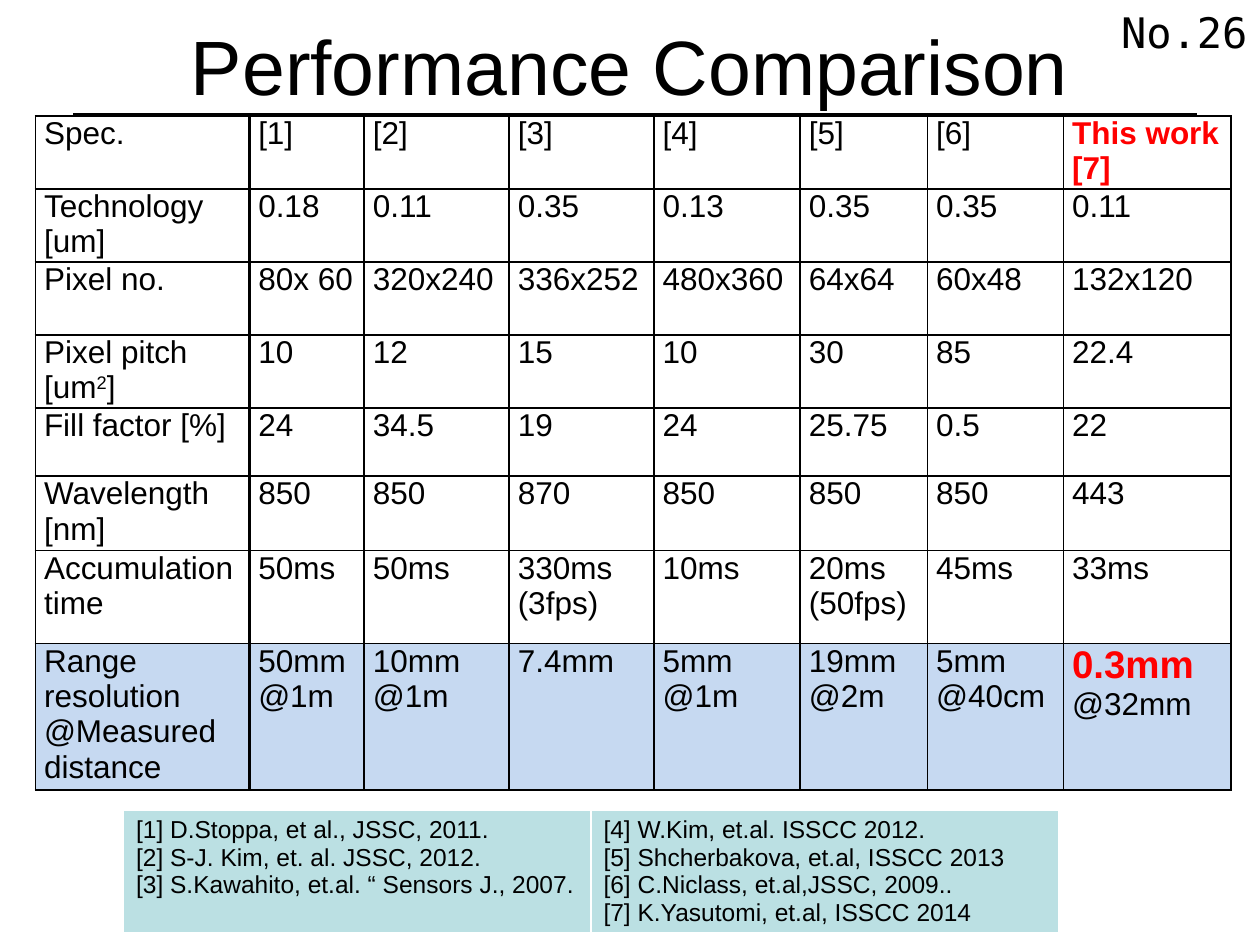
from dataclasses import dataclass
from typing import Optional

from lxml import etree
from pptx import Presentation
from pptx import util as u
from pptx.dml.color import RGBColor
from pptx.enum import shapes, text
from pptx.oxml.ns import qn

BLACK = RGBColor(0, 0, 0)
WHITE = RGBColor(255, 255, 255)
RED = RGBColor(255, 0, 0)
PALE_BLUE = RGBColor(0xC6, 0xD9, 0xF1)
TEAL = RGBColor(0xBB, 0xE0, 0xE3)
SANS, MONO = "Arial", "DejaVu Sans Mono"
SIDES = "LRTB"


@dataclass(frozen=True)
class Grid:
    """Table layout in inches, with its look."""
    left: float
    top: float
    cols: tuple[float, ...]
    rows: tuple[float, ...]
    size: int
    border: RGBColor
    align: text.PP_ALIGN
    inset: tuple[float, float]
    thick_edge: Optional[int] = None  # column whose right edge is heavier


@dataclass(frozen=True)
class Emphasis:
    """First line of a cell set in bold red."""
    row: int
    col: int
    lines: int
    size: int


SPEC_GRID = Grid(0.28, 0.92, (1.7, 0.91, 1.15, 1.15, 1.16, 1.01, 1.08, 1.33),
                 (0.58, 0.58, 0.58, 0.58, 0.54, 0.59, 0.74, 1.16),
                 18, BLACK, text.PP_ALIGN.JUSTIFY, (0.07, 0), 0)
REF_GRID = Grid(0.98, 6.43, (3.71, 3.71), (0.79,),
                14, WHITE, text.PP_ALIGN.LEFT, (0.1, 0.05))

# "\n" starts a paragraph, "\v" breaks a line
SPECS = (
    ("Spec.", "[1]", "[2]", "[3]", "[4]", "[5]", "[6]", "This work\n[7]"),
    ("Technology [um]", "0.18", "0.11", "0.35", "0.13", "0.35", "0.35", "0.11"),
    ("Pixel no.", "80x 60", "320x240", "336x252", "480x360", "64x64", "60x48",
     "132x120"),
    ("Pixel pitch\n[um", "10", "12", "15", "10", "30", "85", "22.4"),
    ("Fill factor [%]", "24", "34.5", "19", "24", "25.75", "0.5", "22"),
    ("Wavelength\n[nm]", "850", "850", "870", "850", "850", "850", "443"),
    ("Accumulation time", "50ms", "50ms", "330ms\n(3fps)", "10ms",
     "20ms\n(50fps)", "45ms", "33ms"),
    ("Range resolution\v@Measured distance", "50mm\n@1m", "10mm\n@1m", "7.4mm",
     "5mm\n@1m", "19mm\n@2m", "5mm\n@40cm", "0.3mm\n@32mm"),
)
PITCH_ROW, RANGE_ROW = 3, 7
EMPHASES = (Emphasis(0, 7, 2, 18), Emphasis(RANGE_ROW, 7, 1, 22))
REFERENCES = ((
    "[1] D.Stoppa, et al., JSSC, 2011.\n"
    "[2] S-J. Kim, et. al. JSSC, 2012.\n"
    "[3] S.Kawahito, et.al. “ Sensors J., 2007.",
    "[4] W.Kim, et.al. ISSCC 2012.\n"
    "[5] Shcherbakova, et.al, ISSCC 2013\n"
    "[6] C.Niclass, et.al,JSSC, 2009..\n"
    "[7] K.Yasutomi, et.al, ISSCC 2014",
),)


def style_run(r, size: float, color: RGBColor = BLACK, bold: bool = False,
              name: str = SANS) -> None:
    r.font.size, r.font.name, r.font.bold = u.Pt(size), name, bold
    r.font.color.rgb = color


def style_text(tf, size: float, align: text.PP_ALIGN, name: str = SANS) -> None:
    for p in tf.paragraphs:
        p.alignment = align
        for r in p.runs:
            style_run(r, size, name=name)


def set_border(cell, side: str, color: RGBColor, width: float) -> None:
    ln = etree.SubElement(cell._tc.get_or_add_tcPr(), qn(f"a:ln{side}"),
                          w=str(u.Pt(width)))
    fill = etree.SubElement(ln, qn("a:solidFill"))
    etree.SubElement(fill, qn("a:srgbClr"), val=str(color))


def add_grid(slide, grid: Grid, content, fills: dict[int, RGBColor]):
    """Add a table; fills maps a row number to its colour."""
    table = slide.shapes.add_table(
        len(grid.rows), len(grid.cols), u.Inches(grid.left), u.Inches(grid.top),
        u.Inches(sum(grid.cols)), u.Inches(sum(grid.rows))).table
    table.first_row = table.horz_banding = False
    for column, width in zip(table.columns, grid.cols):
        column.width = u.Inches(width)
    for row, height in zip(table.rows, grid.rows):
        row.height = u.Inches(height)
    for i, values in enumerate(content):
        for j, value in enumerate(values):
            cell = table.cell(i, j)
            cell.margin_left = cell.margin_right = u.Inches(grid.inset[0])
            cell.margin_top = cell.margin_bottom = u.Inches(grid.inset[1])
            heavy = {grid.thick_edge: "R"}
            if grid.thick_edge is not None:
                heavy[grid.thick_edge + 1] = "L"
            for side in SIDES:
                width = 1.5 if heavy.get(j) == side else 1
                set_border(cell, side, grid.border, width)
            if i in fills:
                cell.fill.solid()
                cell.fill.fore_color.rgb = fills[i]
            else:
                cell.fill.background()
            cell.text_frame.text = value
            style_text(cell.text_frame, grid.size, grid.align)
    return table


def add_square_unit(p, size: float) -> None:
    """Close a unit with a raised 2 and a bracket."""
    for part, baseline in (("2", "30000"), ("]", "0")):
        r = p.add_run()
        r.text = part
        style_run(r, size)
        r._r.get_or_add_rPr().set("baseline", baseline)


def add_title(prs, slide) -> None:
    line = slide.shapes.add_connector(
        shapes.MSO_CONNECTOR.STRAIGHT, u.Inches(0.58), u.Inches(0.91),
        u.Inches(9.5), u.Inches(0.91))
    line.line.color.rgb, line.line.width = BLACK, u.Pt(2)
    etree.SubElement(line._element.spPr, qn("a:effectLst"))
    sp = slide.shapes.title
    sp.left, sp.top = int(prs.slide_width * 0.05), u.Inches(-0.11)
    sp.width, sp.height = int(prs.slide_width * 0.9), u.Inches(1.25)
    tf = sp.text_frame
    tf.text = "Performance Comparison"
    tf.vertical_anchor = text.MSO_ANCHOR.MIDDLE
    style_text(tf, 44, text.PP_ALIGN.CENTER)


def add_slide_number(prs, slide) -> None:
    width = u.Inches(2.33)
    tf = slide.shapes.add_textbox(prs.slide_width - width, 0, width,
                                  u.Inches(0.52)).text_frame
    tf.word_wrap = True
    tf.text = "No.26"
    style_text(tf, 24, text.PP_ALIGN.RIGHT, MONO)


def main() -> None:
    prs = Presentation()
    prs.slide_width, prs.slide_height = u.Inches(10), u.Inches(7.5)
    slide = prs.slides.add_slide(prs.slide_layouts[5])
    add_title(prs, slide)
    specs = add_grid(slide, SPEC_GRID, SPECS, {RANGE_ROW: PALE_BLUE})
    pitch = specs.cell(PITCH_ROW, 0).text_frame
    add_square_unit(pitch.paragraphs[-1], SPEC_GRID.size)
    for e in EMPHASES:
        for p in specs.cell(e.row, e.col).text_frame.paragraphs[:e.lines]:
            style_run(p.runs[0], e.size, RED, bold=True)
    add_grid(slide, REF_GRID, REFERENCES, {0: TEAL})
    add_slide_number(prs, slide)
    prs.save("out.pptx")


if __name__ == "__main__":
    main()
